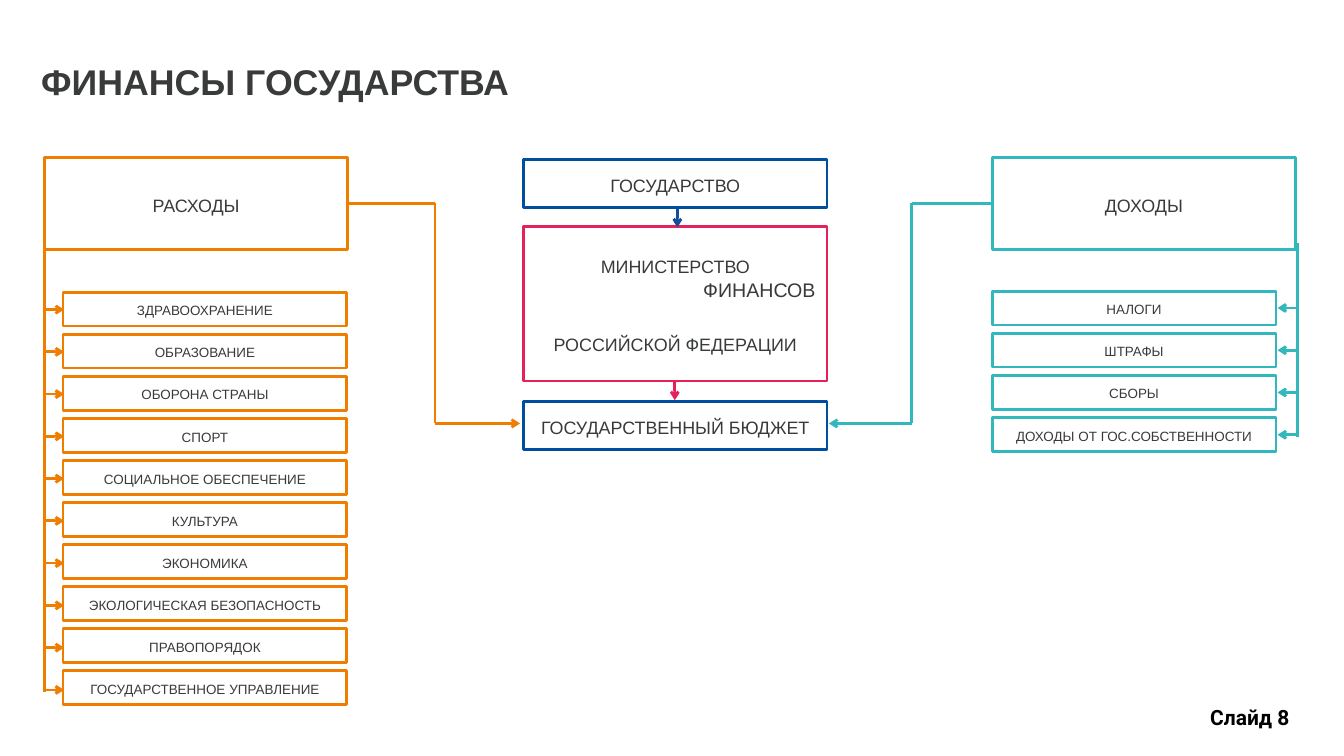
from itertools import pairwise

from pptx import Presentation
from pptx.dml.color import RGBColor
from pptx.enum.shapes import MSO_CONNECTOR as Connector, MSO_SHAPE as Shape
from pptx.enum.text import MSO_ANCHOR as Anchor, PP_ALIGN as Align
from pptx.oxml.ns import qn
from pptx.util import Cm, Pt

COLORS = {
    "expense": "EE7D00",
    "income": "31B7BC",
    "state": "004F9E",
    "state_arrow": "144E99",
    "ministry": "E6215A",
    "text": "393B3B",
    "black": "000000",
}
EXPENSES = [
    "здравоохранение", "образование", "оборона страны", "спорт",
    "социальное обеспечение", "культура", "экономика",
    "экологическая безопасность", "правопорядок", "государственное управление",
]
INCOMES = ["налоги", "штрафы", "сборы", "доходы от гос.собственности"]

WIDE, ITEM_WIDTH, ITEM_HEIGHT = 15.29, 14.3, 1.7
ITEM_STEP, ARROW_STEP = 2.12, 2.13
CENTER_LEFT, ROW_HEIGHT = 26.39, 2.44
LINK_TOP, LINK_BOTTOM = 10.24, 21.34


def rgb(name):
    """Return the named palette colour."""
    return RGBColor.from_string(COLORS[name])


def add_words(paragraph, words, size, color="text", font="Arial", bold=False, small=False):
    """Add one formatted run to a paragraph."""
    run = paragraph.add_run()
    run.text = words
    run.font.size = Pt(size)
    run.font.name = font
    run.font.bold = bold
    run.font.color.rgb = rgb(color)
    if small:
        run.font._element.set("cap", "small")


def set_frame(frame, margin):
    """Give a text frame equal margins, wrapping and middle anchoring."""
    frame.word_wrap = True
    frame.vertical_anchor = Anchor.MIDDLE
    frame.margin_left = frame.margin_right = Cm(margin)
    frame.margin_top = frame.margin_bottom = Cm(margin)


def add_box(slide, left, top, width, height, color, lines):
    """Draw an outlined box with centred lines of (words, size, indent, space before)."""
    box = slide.shapes.add_shape(Shape.RECTANGLE, Cm(left), Cm(top), Cm(width), Cm(height))
    box.shadow.inherit = False
    box.fill.background()
    box.line.color.rgb = rgb(color)
    box.line.width = Pt(4)
    frame = box.text_frame
    set_frame(frame, 0)
    for index, (words, size, indent, before) in enumerate(lines):
        paragraph = frame.add_paragraph() if index else frame.paragraphs[0]
        paragraph.alignment = Align.CENTER
        if indent:
            paragraph._p.get_or_add_pPr().set("marL", str(Cm(indent)))
        if before:
            paragraph.space_before = Pt(before)
        add_words(paragraph, words, size, small=True)


def add_path(slide, points, color, arrow=True):
    """Join points with straight lines, with an optional arrowhead at the end."""
    for start, end in pairwise(points):
        link = slide.shapes.add_connector(
            Connector.STRAIGHT, Cm(start[0]), Cm(start[1]), Cm(end[0]), Cm(end[1]))
        link.line.color.rgb = rgb(color)
        link.line.width = Pt(3.9)
        properties = link._element.spPr
        if arrow and end == points[-1]:
            head = properties.find(qn("a:ln"))
            head.append(head.makeelement(qn("a:tailEnd"), {"type": "arrow"}))
        properties.append(properties.makeelement(qn("a:effectLst"), {}))


def add_label(slide, left, top, width, height, words, size, align, **style):
    """Add a bold free-standing line of text."""
    label = slide.shapes.add_textbox(Cm(left), Cm(top), Cm(width), Cm(height))
    set_frame(label.text_frame, 0.15)
    paragraph = label.text_frame.paragraphs[0]
    paragraph.alignment = align
    add_words(paragraph, words, size, bold=True, **style)


def add_branch(slide, color, heading, head_left, items, item_left, item_top, spine, arrows):
    """Draw a heading with its spine, item boxes and arrows."""
    add_box(slide, head_left, 7.95, WIDE, 4.62, color, [(heading, 32, 0, 0)])
    add_path(slide, spine, color, arrow=False)
    start, end, arrow_top = arrows
    for index, item in enumerate(items):
        add_box(slide, item_left, item_top + index * ITEM_STEP, ITEM_WIDTH, ITEM_HEIGHT,
                color, [(item, 24, 0, 0)])
        y = arrow_top + index * ARROW_STEP
        add_path(slide, [(start, y), (end, y)], color)


def add_center(slide):
    """Draw the state, the ministry and the budget with their arrows."""
    rows = [
        (8.03, ROW_HEIGHT, "state", [("государство", 32, 0, 0)]),
        (11.4, 7.8, "ministry", [
            ("министерство", 32, 0, 0),
            ("ФИНАНСОВ", 28, 2.82, 0),
            ("российской федерации", 32, 0, 39),
        ]),
        (20.22, ROW_HEIGHT, "state", [("государственный бюджет", 32, 0, 0)]),
    ]
    for top, height, color, lines in rows:
        add_box(slide, CENTER_LEFT, top, WIDE, height, color, lines)
    add_path(slide, [(34.14, 10.52), (34.14, 11.46)], "state_arrow")
    add_path(slide, [(34.01, 19.25), (34.01, 20.17)], "ministry")


def main():
    """Build and save the slide."""
    deck = Presentation()
    deck.slide_width, deck.slide_height = Cm(67.74), Cm(38.1)
    slide = deck.slides.add_slide(deck.slide_layouts[6])

    add_label(slide, 1.93, 2.87, 46.71, 2.46, "ФИНАНСЫ ГОСУДАРСТВА", 51, Align.LEFT)
    add_branch(slide, "expense", "расходы", 2.24, EXPENSES, 3.18, 14.73,
               [(2.24, 12.6), (2.24, 34.87)], (2.26, 3.23, 15.6))
    add_branch(slide, "income", "доходы", 50.01, INCOMES, 50.01, 14.68,
               [(65.38, 12.27), (65.38, 22)], (65.33, 64.39, 15.52))
    add_center(slide)
    for color, start, turn, end in [("expense", 17.53, 21.92, 26.21),
                                    ("income", 50.11, 45.95, 41.78)]:
        add_path(slide, [(start, LINK_TOP), (turn, LINK_TOP),
                         (turn, LINK_BOTTOM), (end, LINK_BOTTOM)], color)
    add_label(slide, 58.7, 35.33, 8.59, 1.57, "Слайд 8", 30, Align.CENTER,
              color="black", font="Roboto")
    deck.save("out.pptx")


if __name__ == "__main__":
    main()
